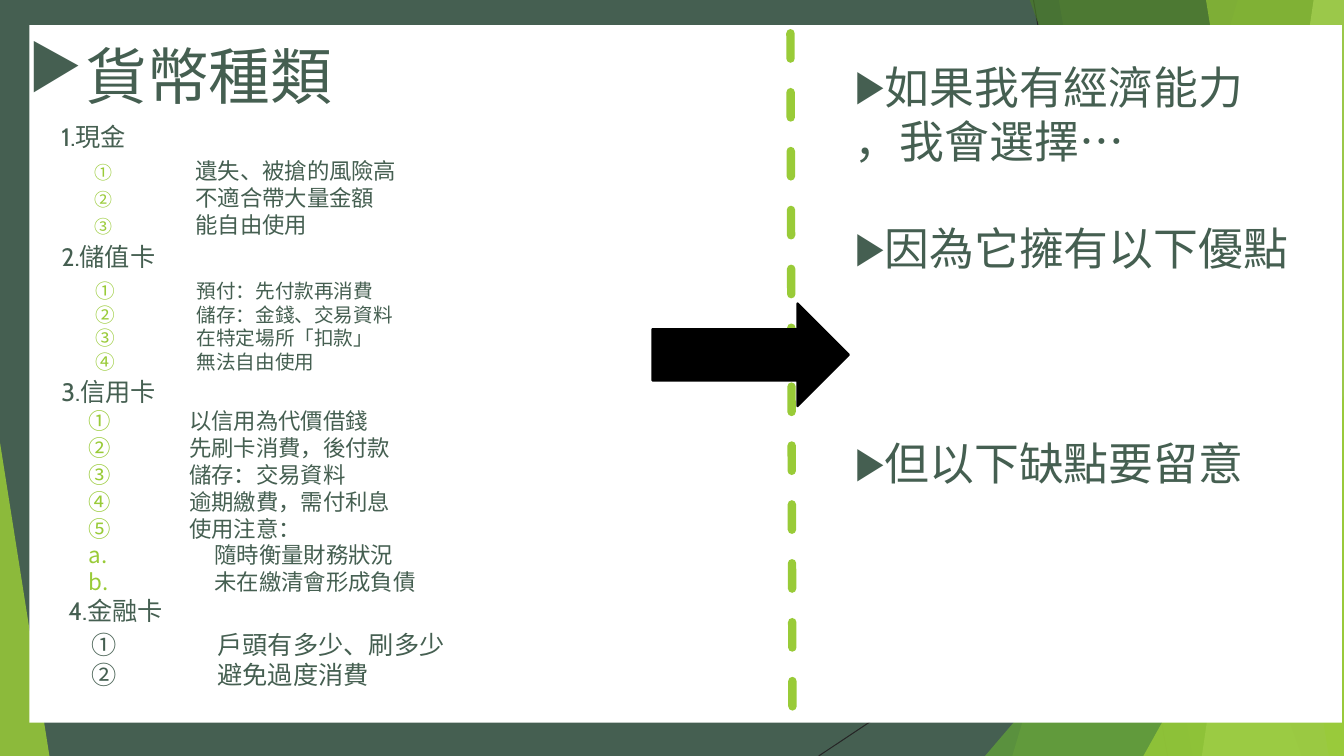
import pptx
import pptx.util
import pptx.dml.color
import pptx.enum.dml
import pptx.enum.shapes
import pptx.enum.text
import pptx.oxml
import lxml.etree

Inches, Pt = pptx.util.Inches, pptx.util.Pt
SHAPES = pptx.enum.shapes.MSO_SHAPE
DRAWING = "{http://schemas.openxmlformats.org/drawingml/2006/main}"
COLORS = {
    "slate": "455F51", "lime": "99CB38", "green": "63A537", "forest": "4A7C29",
    "pale": "C2E088", "white": "FFFFFF", "black": "000000", "hairline": "262626",
}


def paint(shape, color, opacity=100):
    """Fill a shape without outline or shadow."""
    shape.shadow.inherit = False
    shape.fill.solid()
    shape.fill.fore_color.rgb = pptx.dml.color.RGBColor.from_string(COLORS[color])
    shape.line.fill.background()
    if opacity < 100:
        tint = shape.fill._xPr.find(f".//{DRAWING}srgbClr")
        lxml.etree.SubElement(tint, DRAWING + "alpha", val=str(opacity * 1000))


def write(box, area, lines, size, font="Cabin", bullet_color=None, bullet_size=100):
    """Place a box; each line is (text, bullet, indent in inches, points before)."""
    box.left, box.top, box.width, box.height = map(Inches, area)
    frame = box.text_frame
    frame.word_wrap = True
    frame.auto_size = pptx.enum.text.MSO_AUTO_SIZE.NONE
    frame.vertical_anchor = pptx.enum.text.MSO_ANCHOR.TOP
    for number, (text, bullet, indent, before) in enumerate(lines):
        para = frame.add_paragraph() if number else frame.paragraphs[0]
        para.text = text
        para.alignment = pptx.enum.text.PP_ALIGN.LEFT
        para.space_before = Pt(before)
        props = para._p.get_or_add_pPr()
        props.set("marL", str(Inches(indent)))
        props.set("indent", str(-Inches(indent)))
        if bullet and bullet_color:
            tint = lxml.etree.SubElement(props, DRAWING + "buClr")
            lxml.etree.SubElement(tint, DRAWING + "srgbClr", val=COLORS[bullet_color])
        if bullet and bullet_size != 100:
            lxml.etree.SubElement(props, DRAWING + "buSzPct", val=str(bullet_size * 1000))
        if bullet == "▶":
            lxml.etree.SubElement(props, DRAWING + "buChar", char=bullet)
        elif bullet:
            lxml.etree.SubElement(props, DRAWING + "buAutoNum", type=bullet)
        else:
            lxml.etree.SubElement(props, DRAWING + "buNone")
        para.font.size = Pt(size)
        para.font.name = font
        para.font.color.rgb = pptx.dml.color.RGBColor.from_string(COLORS["slate"])


deck = pptx.Presentation()
deck.slide_width, deck.slide_height = Inches(13.33), Inches(7.5)
page = deck.slides.add_slide(deck.slide_layouts[1])
page.background.fill.solid()
page.background.fill.fore_color.rgb = pptx.dml.color.RGBColor.from_string(COLORS["slate"])

# Lines: two hairlines behind the facets, then the dashed divider
lines = []
for x1, y1, x2, y2, color, width in [
    (10.25, 0, 11.58, 7.5, "hairline", 0.75),
    (13.33, 4.03, 8.12, 7.5, "hairline", 0.75),
    (7.84, 0.33, 7.86, 7.09, "lime", 6),
]:
    line = page.shapes.add_connector(
        pptx.enum.shapes.MSO_CONNECTOR.STRAIGHT, *map(Inches, (x1, y1, x2, y2)))
    line.line.color.rgb = pptx.dml.color.RGBColor.from_string(COLORS[color])
    line.line.width = Pt(width)
    lxml.etree.SubElement(line.element.spPr, DRAWING + "effectLst")
    lines.append(line)
divider = lines[-1]
divider.line.dash_style = pptx.enum.dml.MSO_LINE.DASH
divider.line._ln.set("cap", "rnd")

# Facets: slanted bands given by top and bottom x, triangles by area and apex
for kind, geometry, color, opacity in [
    ("band", (12.28, 10.04), "lime", 30),
    ("band", (10.5, 11.83), "lime", 20),
    ("triangle", (9.77, 3.33, 3.56, 4.17, 1), "green", 72),
    ("band", (10.21, 12.91), "forest", 70),
    ("band", (13.03, 11.92), "pale", 70),
    ("band", (11.96, 13.18), "lime", 65),
    ("triangle", (11.34, 3.93, 1.99, 3.57, 1), "lime", 80),
    ("triangle", (0, 4.39, 0.49, 3.11, 0), "lime", 85),
]:
    if kind == "band":
        top, bottom = geometry
        outline = page.shapes.build_freeform(Inches(top), Inches(-0.01))
        corners = [(13.33, -0.01), (13.33, 7.5), (bottom, 7.5)]
        outline.add_line_segments([(Inches(x), Inches(y)) for x, y in corners])
        facet = outline.convert_to_shape()
    else:
        *area, apex = geometry
        facet = page.shapes.add_shape(SHAPES.ISOSCELES_TRIANGLE, *map(Inches, area))
        facet.adjustments[0] = apex
    paint(facet, color, opacity)

# White panel with the divider, title and body on top
panel = page.shapes.add_shape(SHAPES.RECTANGLE, *map(Inches, (0.29, 0.25, 13.02, 6.92)))
paint(panel, "white")
title, body = page.shapes.title, page.placeholders[1]
for shape in (divider, title, body):
    panel.element.getparent().append(shape.element)

write(title, (0.18, 0.33, 6.67, 0.84), [("貨幣種類", "▶", 0, 0)], 44)
write(body, (8.38, 0.54, 6.67, 4.41), [
    ("如果我有經濟能力", "▶", 0, 0),
    ("，我會選擇…", None, 0, 0),
    ("因為它擁有以下優點", "▶", 0, 38.4),
    ("但以下缺點要留意", "▶", 0, 115.2),
], 32)

# Headings of the four kinds of money
for left, top, heading in [
    (0.51, 1.15, "1.現金"), (0.51, 2.34, "2.儲值卡"),
    (0.51, 3.68, "3.信用卡"), (0.58, 5.86, "4.金融卡"),
]:
    box = page.shapes.add_textbox(0, 0, 0, 0)
    write(box, (left, top, 4.62, 0.4), [(heading, None, 0, 0)], 18)

# Numbered points under each heading
CIRCLED, LETTERED = "circleNumWdWhitePlain", "alphaLcPeriod"
for area, indent, points, letters, style in [
    ((0.84, 1.51, 3.53, 1.16), 1,
     ["遺失、被搶的風險高", "不適合帶大量金額", "能自由使用"], [],
     (16, "Cabin", "lime", 80)),
    ((0.85, 2.72, 4.28, 1.81), 1,
     ["預付：先付款再消費", "儲存：金錢、交易資料", "在特定場所「扣款」", "無法自由使用"], [],
     (14, "Cabin", "lime")),
    ((0.78, 3.99, 3.76, 2.62), 1,
     ["以信用為代價借錢", "先刷卡消費，後付款", "儲存：交易資料", "逾期繳費，需付利息", "使用注意："],
     ["隨時衡量財務狀況", "未在繳清會形成負債"],
     (16, "Cabin", "lime")),
    ((0.81, 6.19, 6.76, 0.71), 1.25, ["戶頭有多少、刷多少", "避免過度消費"], [],
     (18, "Lato")),
]:
    entries = [(point, CIRCLED, indent, 0) for point in points]
    entries += [(letter, LETTERED, 1.25, 0) for letter in letters]
    write(page.shapes.add_textbox(0, 0, 0, 0), area, entries, *style)

# Arrow from the kinds of money to the choice
arrow = page.shapes.add_shape(SHAPES.RIGHT_ARROW, *map(Inches, (6.47, 3.01, 1.95, 1.02)))
paint(arrow, "black")
arrow.line.color.rgb = pptx.dml.color.RGBColor.from_string(COLORS["black"])
arrow.line.width = Pt(1.5)

deck.save("out.pptx")
